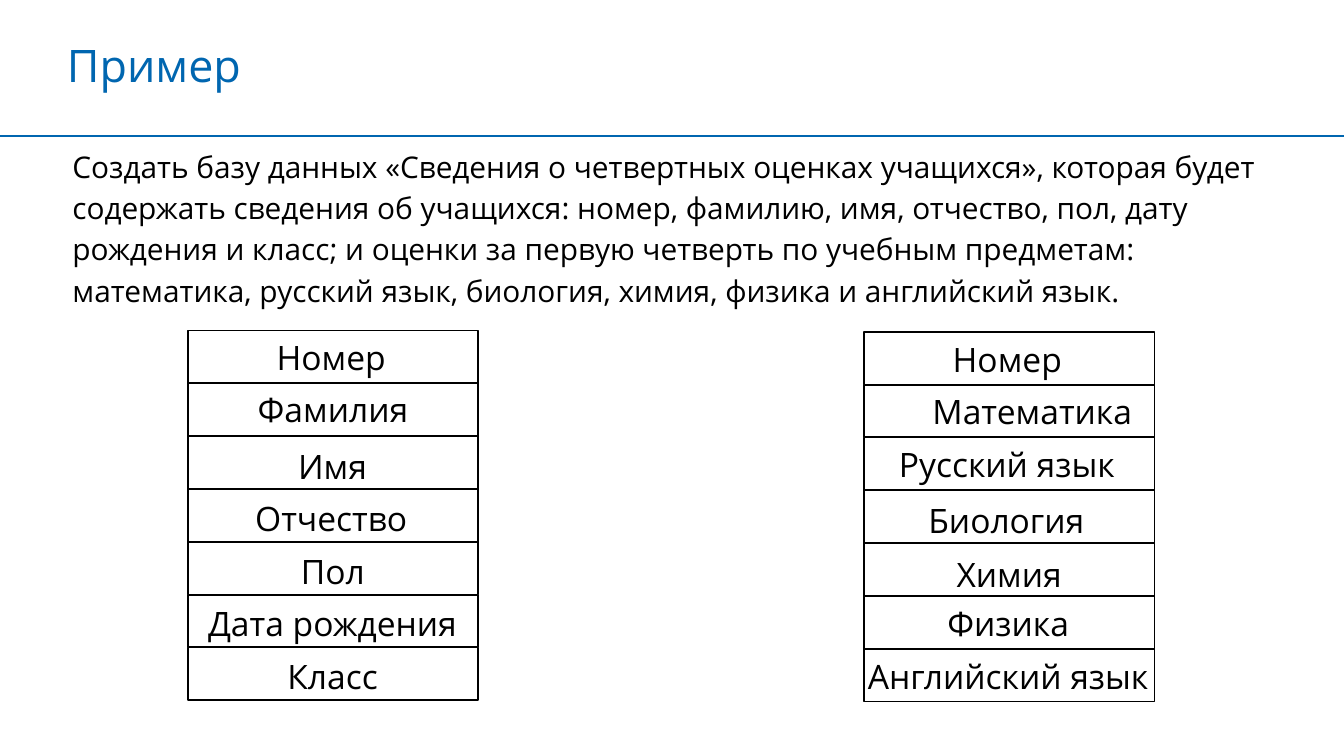
"""Build the slide that shows the fields of two pupil tables."""
from dataclasses import dataclass

from lxml.etree import SubElement
from pptx import Presentation
from pptx.dml.color import RGBColor
from pptx.enum.shapes import MSO_CONNECTOR, MSO_SHAPE
from pptx.enum.text import MSO_AUTO_SIZE, PP_ALIGN
from pptx.oxml.ns import qn
from pptx.shapes.group import GroupShape
from pptx.slide import Slide
from pptx.util import Pt

COLOURS = {"accent": "0066B0", "ink": "000000"}
FONT = "Open Sans"
CELL_WIDTH, CELL_HEIGHT, ROW_STEP = 155.5, 28.3, 28.3
LABEL_HEIGHT = 29.1
TASK = (
    "Создать базу данных «Сведения о четвертных оценках учащихся», которая будет "
    "содержать сведения об учащихся: номер, фамилию, имя, отчество, пол, дату "
    "рождения и класс; и оценки за первую четверть по учебным предметам: "
    "математика, русский язык, биология, химия, физика и английский язык."
)


@dataclass(frozen=True)
class Field:
    """A field name with its label's left edge, width and drop below the row top."""
    name: str
    left: float
    width: float
    drop: float = 0


@dataclass(frozen=True)
class FieldColumn:
    """A stack of field cells."""
    left: float
    top: float
    fields: tuple[Field, ...]


COLUMNS = (
    FieldColumn(100.8, 177.1, (
        Field("Номер", 141.1, 73.4),
        Field("Фамилия", 131, 95.8, -0.7),
        Field("Имя", 152.6, 51.8, 1.4),
        Field("Отчество", 129.6, 97.2, 1.4),
        Field("Пол", 154.1, 49, 1.4),
        Field("Дата рождения", 104.4, 149, 0.7),
        Field("Класс", 146.9, 63.4, 0.7),
    )),
    FieldColumn(463, 177.8, (
        Field("Номер", 503.3, 73.4),
        Field("Математика", 492.5, 122.4),
        Field("Русский язык", 474.5, 131.8),
        Field("Биология", 490.3, 98.6, 1.4),
        Field("Химия", 505.4, 71.3, 2.2),
        Field("Физика", 500.4, 80.6),
        Field("Английский язык", 457.9, 166.3),
    )),
)


def colour(name: str) -> RGBColor:
    """Return the named colour."""
    return RGBColor.from_string(COLOURS[name])


def add_text(parent: Slide | GroupShape, text: str, *, left: float, top: float,
             width: float, height: float, size: float = 18, ink: str = "ink",
             wrap: bool = True, inset: float | None = None,
             leading: float | None = None) -> None:
    """Add a text box in the given format."""
    shapes = parent.shapes
    box = shapes.add_textbox(Pt(left), Pt(top), Pt(width), Pt(height))
    frame = box.text_frame
    frame.word_wrap = wrap
    frame.auto_size = MSO_AUTO_SIZE.SHAPE_TO_FIT_TEXT
    if inset is not None:
        frame.margin_left = frame.margin_right = Pt(inset)
        frame.margin_top = frame.margin_bottom = Pt(inset)
    para = frame.paragraphs[0]
    para.alignment = PP_ALIGN.LEFT
    if leading is not None:
        para.line_spacing = Pt(leading)
    span = para.add_run()
    span.text = text
    span.font.name = FONT
    span.font.size = Pt(size)
    span.font.color.rgb = colour(ink)


def add_rule(page: Slide, top: float, width: float) -> None:
    """Add the horizontal rule below the title."""
    rule = page.shapes.add_connector(
        MSO_CONNECTOR.STRAIGHT, Pt(0), Pt(top), Pt(width), Pt(top))
    rule.line.color.rgb = colour("accent")
    rule.line.width = Pt(1)
    SubElement(rule.element.spPr, qn("a:effectLst"))


def add_column(page: Slide, column: FieldColumn) -> None:
    """Add each field as a group of a frame and its label."""
    for row, field in enumerate(column.fields):
        top = column.top + row * ROW_STEP
        group = page.shapes.add_group_shape()
        cell = group.shapes.add_shape(
            MSO_SHAPE.RECTANGLE, Pt(column.left), Pt(top), Pt(CELL_WIDTH), Pt(CELL_HEIGHT))
        cell.shadow.inherit = False
        cell.fill.background()
        cell.line.color.rgb = colour("ink")
        cell.line.width = Pt(1)
        add_text(group, field.name, left=field.left, top=top + field.drop,
                 width=field.width, height=LABEL_HEIGHT, wrap=False)


def main() -> None:
    """Build and save the deck."""
    deck = Presentation()
    deck.slide_width, deck.slide_height = Pt(720), Pt(405)
    page = deck.slides.add_slide(deck.slide_layouts[6])
    add_text(page, "Пример", left=28.8, top=16.6, width=584.6, height=36,
             size=24, ink="accent")
    add_rule(page, 72.7, 720)
    add_text(page, TASK, left=28.8, top=67, width=661, height=107.3,
             size=16, inset=10, leading=22)
    for column in COLUMNS:
        add_column(page, column)
    deck.save("out.pptx")


if __name__ == "__main__":
    main()
